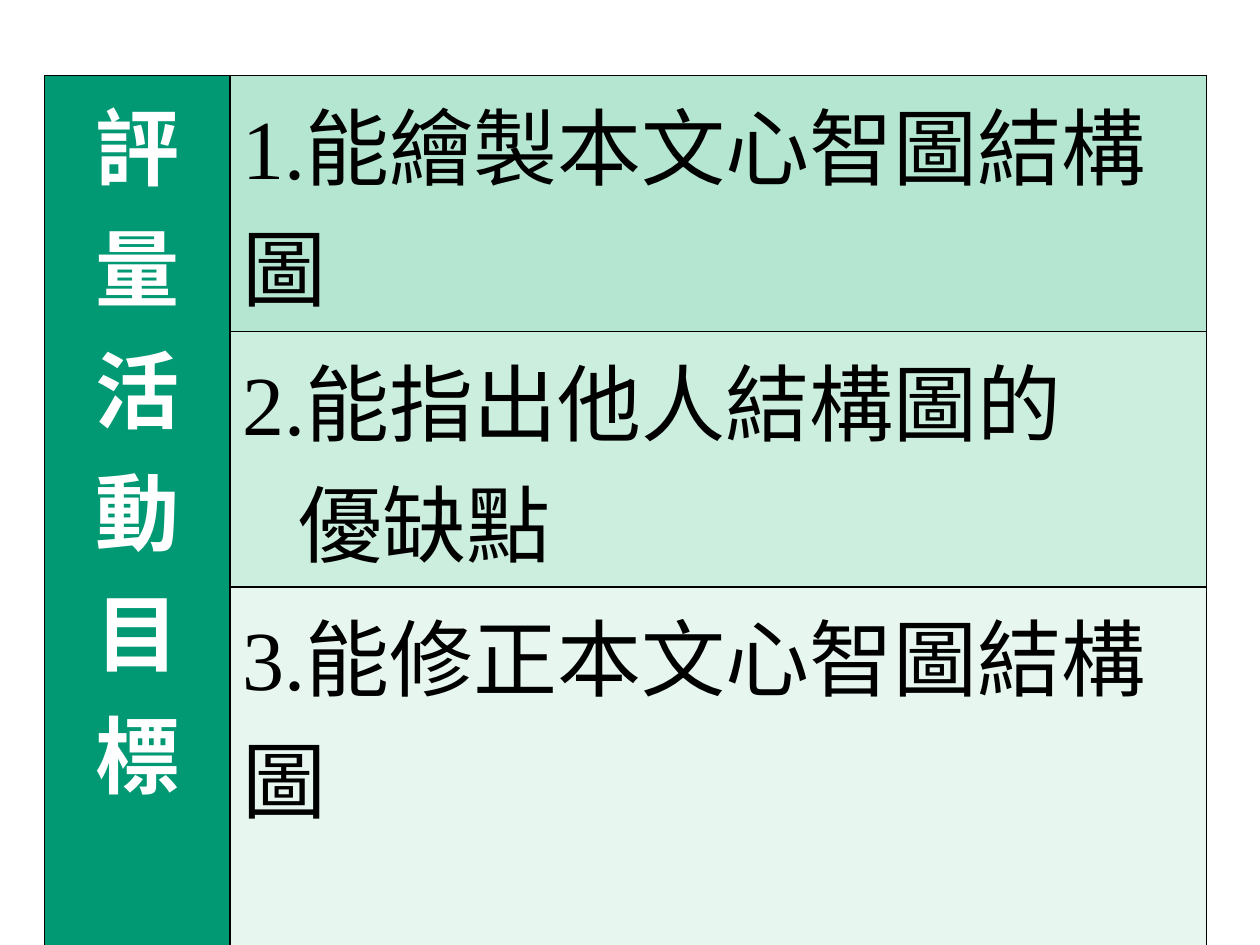
from lxml import etree
from pptx import Presentation
from pptx.dml.color import RGBColor
from pptx.enum import text
from pptx.oxml import ns
from pptx.util import Pt


def style(cell, lines, fill, ink, bold=False):
    """Fill a cell, write its lines and draw its black borders."""
    cell.fill.solid()
    cell.fill.fore_color.rgb = RGBColor.from_string(fill)
    cell.text = "\n".join(lines)
    for para in cell.text_frame.paragraphs:
        para.font.name = "Times New Roman"
        para.font.size = Pt(48)
        para.font.bold = bold
        para.font.color.rgb = RGBColor.from_string(ink)
    edge(cell)


def edge(cell):
    props = cell._tc.get_or_add_tcPr()
    for spot, side in enumerate(("lnL", "lnR", "lnT", "lnB")):
        line = etree.Element(ns.qn("a:" + side), w=str(Pt(1)))
        solid = etree.SubElement(line, ns.qn("a:solidFill"))
        etree.SubElement(solid, ns.qn("a:srgbClr"), val="000000")
        props.insert(spot, line)


deck = Presentation()
deck.slide_width, deck.slide_height = Pt(720), Pt(540)
slide = deck.slides.add_slide(deck.slide_layouts[6])

widths = [105.84, 558]
heights = [90.72, 141.84, 147.6]
goals = [
    (["1.能繪製本文心智圖結構圖"], "B4E6D1"),
    (["2.能指出他人結構圖的", "優缺點"], "CCEEDF"),
    (["3.能修正本文心智圖結構圖"], "E7F6EF"),
]

frame = slide.shapes.add_table(3, 2, Pt(25.5), Pt(43.2),
                               Pt(sum(widths)), Pt(sum(heights)))
table = frame.table
for col, width in zip(table.columns, widths):
    col.width = Pt(width)
for row, height in zip(table.rows, heights):
    row.height = Pt(height)

head = table.cell(0, 0)
head.merge(table.cell(2, 0))
style(head, ["評量活動目標"], "009973", "FFFFFF", bold=True)
head.text_frame.paragraphs[0].alignment = text.PP_ALIGN.CENTER
for num in (1, 2):
    edge(table.cell(num, 0))

for num, (lines, fill) in enumerate(goals):
    cell = table.cell(num, 1)
    style(cell, lines, fill, "000000")
    for para in cell.text_frame.paragraphs[1:]:
        para._p.get_or_add_pPr().set("marL", str(Pt(32)))

deck.save("out.pptx")
